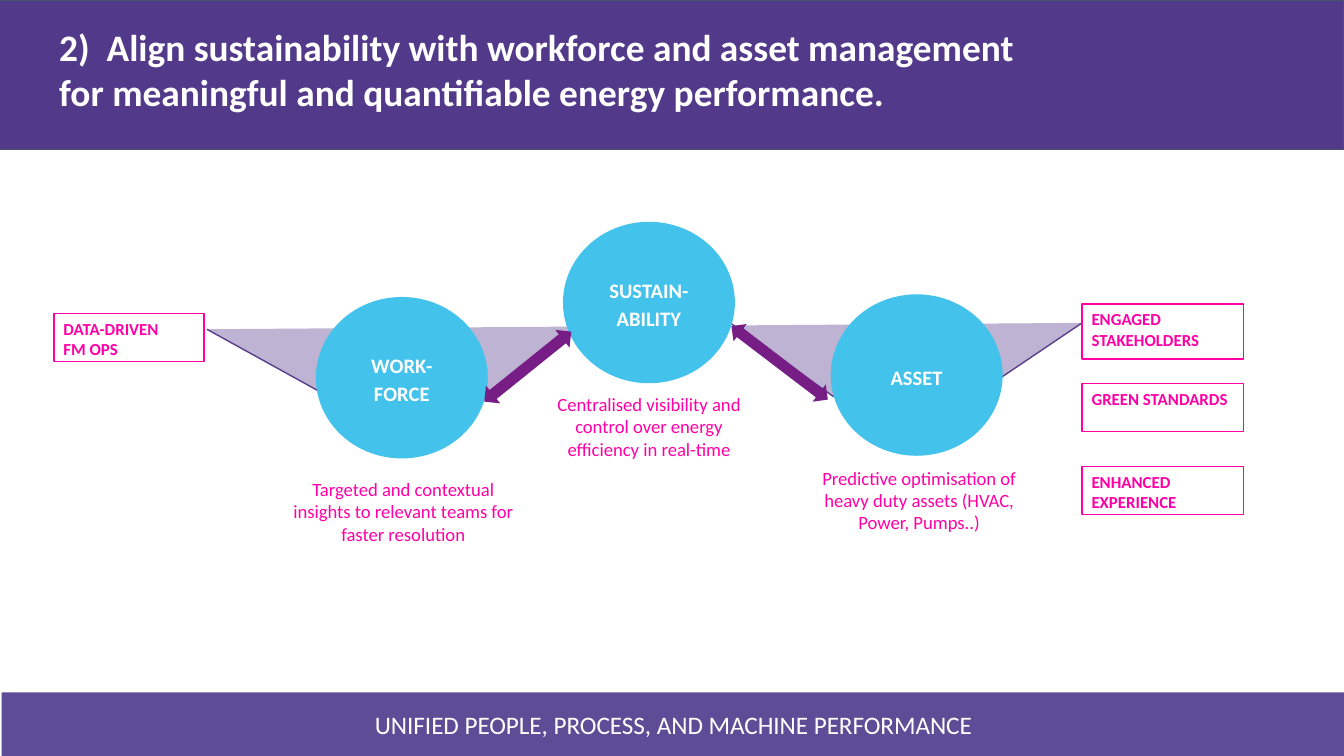
from lxml import etree
from pptx import Presentation
from pptx.dml.color import RGBColor
from pptx.enum.shapes import MSO_SHAPE
from pptx.enum.text import MSO_ANCHOR, PP_ALIGN
from pptx.oxml.ns import qn
from pptx.util import Cm, Pt

RECT = MSO_SHAPE.RECTANGLE
OVAL = MSO_SHAPE.OVAL
ARROW = MSO_SHAPE.LEFT_RIGHT_ARROW
LEFT, CENTER = PP_ALIGN.LEFT, PP_ALIGN.CENTER
TOP, MIDDLE = MSO_ANCHOR.TOP, MSO_ANCHOR.MIDDLE

FONT = "Calibri"
WHITE = "FFFFFF"
PINK = "FF00A6"
BLUE = "43C3EC"
VIOLET = "583D8C"


def rgb(color):
    return RGBColor.from_string(color)


def paint(sp, fill=None, line=None, alpha=None):
    sp.shadow.inherit = False
    if fill:
        sp.fill.solid()
        sp.fill.fore_color.rgb = rgb(fill)
    else:
        sp.fill.background()
    if alpha:
        clr = sp.fill._xPr.find(qn("a:solidFill"))[0]
        etree.SubElement(clr, qn("a:alpha"), val=str(alpha * 1000))
    if line:
        sp.line.color.rgb = rgb(line)
        sp.line.width = Pt(0.75)
    else:
        sp.line.fill.background()


def write(sp, text, size, color, bold=False, align=CENTER, anchor=TOP,
          inset=(0.18, 0.1), spacing=None):
    tf = sp.text_frame
    tf.word_wrap = True
    tf.vertical_anchor = anchor
    tf.margin_left = tf.margin_right = Cm(inset[0])
    tf.margin_top = tf.margin_bottom = Cm(inset[1])
    tf.text = text
    for p in tf.paragraphs:
        p.alignment = align
        p.line_spacing = spacing
        p.font.name = FONT
        p.font.size = Pt(size)
        p.font.bold = bold
        p.font.color.rgb = rgb(color)


def add_shape(s, kind, box, **style):
    sp = s.shapes.add_shape(kind, *map(Cm, box))
    paint(sp, **style)
    return sp


def add_text(s, box, text, size, color, **style):
    sp = s.shapes.add_textbox(*map(Cm, box))
    write(sp, text, size, color, **style)


def add_ribbon(s, points):
    start, *rest = [(Cm(x), Cm(y)) for x, y in points]
    builder = s.shapes.build_freeform(*start)
    builder.add_line_segments(rest, close=False)
    paint(builder.convert_to_shape(), fill=VIOLET, line=VIOLET, alpha=39)


def add_circle(s, x, y, text):
    sp = add_shape(s, OVAL, (x, y, 3.25, 3.05), fill=BLUE)
    write(sp, text, 11, WHITE, bold=True, anchor=MIDDLE,
          inset=(0.13, 0.13), spacing=1.15)


def add_tag(s, box, text):
    sp = add_shape(s, RECT, box, line=PINK)
    write(sp, text, 9, PINK, bold=True, align=LEFT)


def add_arrow(s, box, angle):
    sp = add_shape(s, ARROW, box, fill="761E86")
    sp.rotation = angle


def main():
    prs = Presentation()
    prs.slide_width, prs.slide_height = Cm(25.4), Cm(14.28)
    s = prs.slides.add_slide(prs.slide_layouts[6])

    add_shape(s, RECT, (-0.15, 0, 25.55, 2.82), fill="52398A", line="44546A")
    add_text(s, (0.94, 0.36, 22.17, 2.57),
             "2)  Align sustainability with workforce and asset management\n"
             "for meaningful and quantifiable energy performance.",
             20, WHITE, bold=True, align=LEFT)

    add_ribbon(s, [(3.91, 6.22), (6.3, 7.54), (9.04, 7.62), (11.15, 5.99),
                   (13.69, 6.02), (15.75, 7.49), (18.42, 7.47), (20.45, 6.1)])

    for x, y, text in [(5.97, 5.61, "WORK-\nFORCE"),
                       (15.7, 5.56, "ASSET"),
                       (10.64, 4.19, "SUSTAIN-\nABILITY")]:
        add_circle(s, x, y, text)

    add_tag(s, (1.02, 5.92, 2.84, 0.91), "DATA-DRIVEN\nFM OPS")
    for y, h, text in [(5.74, 1.04, "ENGAGED STAKEHOLDERS"),
                       (7.24, 0.91, "GREEN STANDARDS"),
                       (8.81, 0.91, "ENHANCED EXPERIENCE")]:
        add_tag(s, (20.45, y, 3.05, h), text)

    captions = [
        ((10.13, 7.32, 4.27, 0.81),
         "Centralised visibility and control over energy efficiency in real-time"),
        ((5.31, 8.92, 4.62, 1.04),
         "Targeted and contextual insights to relevant teams for faster resolution"),
        ((15.06, 8.71, 4.62, 1.35),
         "Predictive optimisation of heavy duty assets (HVAC, Power, Pumps..)"),
    ]
    for box, text in captions:
        add_text(s, box, text, 10, PINK)

    add_arrow(s, (8.92, 6.71, 2.11, 0.43), 321.2)
    add_arrow(s, (13.59, 6.65, 2.29, 0.41), 37.3)

    footer = add_shape(s, RECT, (0.03, 13.08, 25.4, 1.2),
                       fill="422D85", alpha=85)
    write(footer, "UNIFIED PEOPLE, PROCESS, AND MACHINE PERFORMANCE",
          13.5, WHITE, anchor=MIDDLE)

    prs.save("out.pptx")


if __name__ == "__main__":
    main()
